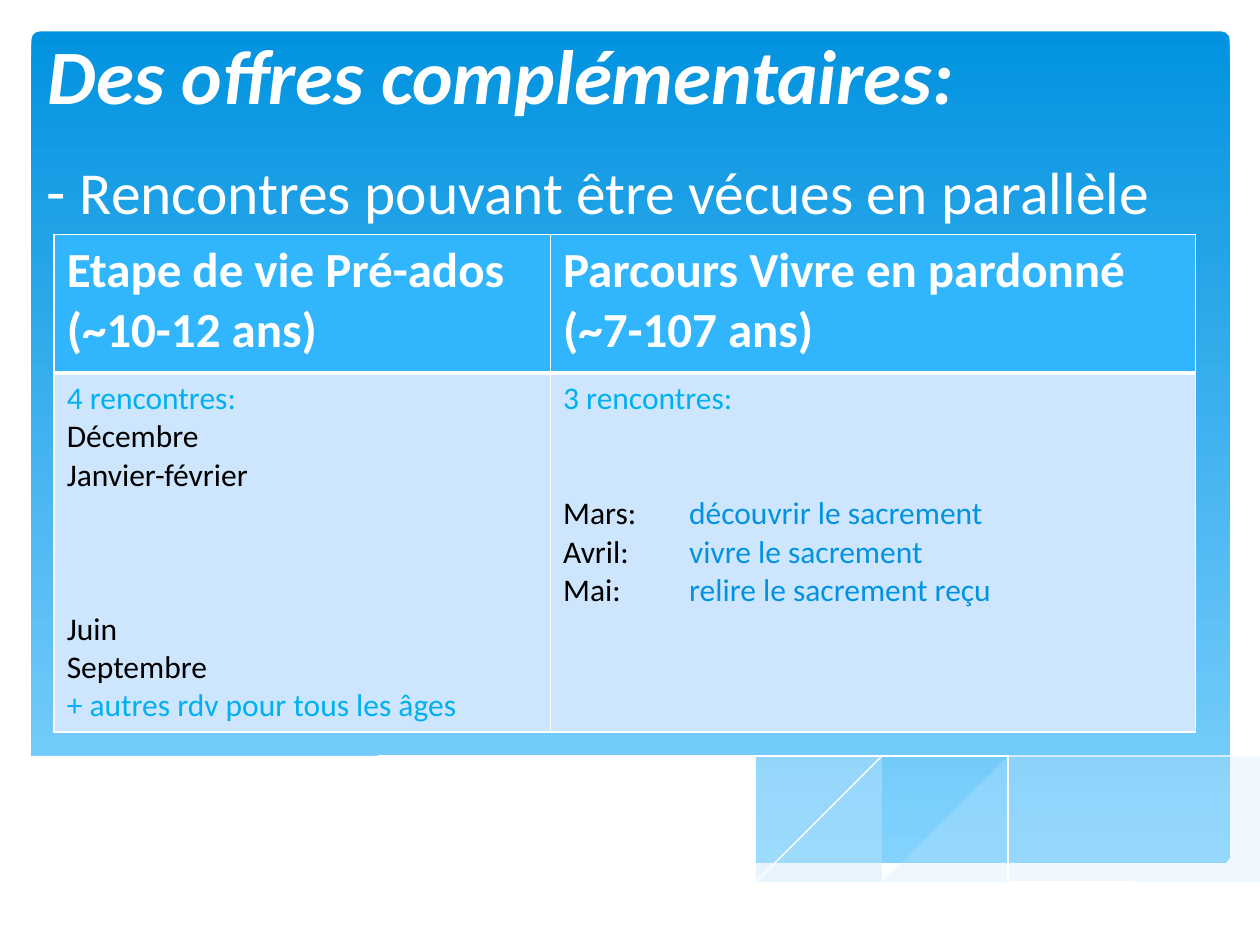
from lxml.etree import SubElement
from pptx import Presentation
from pptx.dml.color import RGBColor
from pptx.enum.shapes import MSO_SHAPE as SHAPE
from pptx.enum.text import MSO_ANCHOR as ANCHOR, PP_ALIGN as ALIGN
from pptx.oxml.ns import qn
from pptx.util import Inches, Pt

WHITE = RGBColor(0xFF, 0xFF, 0xFF)
BLACK = RGBColor(0, 0, 0)
BLUE = RGBColor(0x02, 0x93, 0xE0)
SKY = RGBColor(0x83, 0xD3, 0xFE)
MIST = RGBColor(0xC6, 0xE7, 0xFC)
CYAN = RGBColor(0x00, 0xB0, 0xF0)
HEAD = RGBColor(0x31, 0xB6, 0xFD)
BODY = RGBColor(0xCE, 0xE5, 0xFE)
FONT = "Calibri"
LINE_PITCH = 22

TITLE = "Des offres complémentaires:"
SUBTITLE = [("- ", 36), ("Rencontres pouvant être vécues en parallèle", 34)]
HEADERS = ["Etape de vie Pré-ados \v(~10-12 ans)",
           "Parcours Vivre en pardonné\n(~7-107 ans)"]
MEETINGS = [
    [(0, [("4 rencontres:", CYAN)]),
     (0, [("Décembre", BLACK)]),
     (0, [("Janvier-février", BLACK)]),
     (3, [("Juin", BLACK)]),
     (0, [("Septembre", BLACK)]),
     (0, [("+ autres rdv pour tous les âges", CYAN)])],
    [(0, [("3 rencontres:", CYAN)]),
     (2, [("Mars: \t", BLACK), ("découvrir le sacrement", BLUE)]),
     (0, [("Avril: \t", BLACK), ("vivre le sacrement", BLUE)]),
     (0, [("Mai: \t", BLACK), ("relire le sacrement reçu", BLUE)])],
]
COL_WIDTHS = [3.94, 5.12]
ROW_HEIGHTS = [1.1, 2.85]

RIGHT_WAVE = [
    [(9.77, 6.01), (9.22, 6.11), (8.62, 6.25), (7.8, 6.44), (7.07, 6.59), (6.62, 6.67)],
    [(6.62, 6.67), (7.33, 6.76), (8.04, 6.8), (8.73, 6.76), (9.29, 6.65), (9.77, 6.49)],
]
MIDDLE_WAVE = [
    [(8.94, 6.75), (8.08, 6.62), (7.07, 6.42), (6.3, 6.24), (5.55, 6.07), (4.89, 5.96),
     (4.2, 5.89), (3.62, 5.87), (2.87, 5.93)],
    [(2.87, 5.93), (3.63, 6.04), (4.5, 6.24), (5.3, 6.42), (6.19, 6.6), (6.96, 6.72),
     (7.62, 6.79), (8.29, 6.8), (8.94, 6.75)],
]
FALLING_LINE = [[(3.1, 5.97), (3.53, 5.91), (4.17, 5.89), (4.89, 5.92), (5.82, 6.02),
                 (6.96, 6.21), (7.96, 6.43), (9.08, 6.73)]]
RISING_LINE = [[(6.14, 6.59), (6.96, 6.37), (7.77, 6.18), (8.67, 6), (9.25, 5.92), (9.76, 5.87)]]
WHITE_WAVE = [
    [(9.77, 6.48), (9.3, 6.64), (8.75, 6.75), (8.09, 6.79), (7.26, 6.74), (6.26, 6.6),
     (5.29, 6.41), (4.47, 6.22), (3.65, 6.04), (2.92, 5.92), (2.3, 5.87), (1.77, 5.86),
     (1.19, 5.89), (0.76, 5.97), (0.23, 6.15)],
    [(0.23, 7.31), (9.77, 7.31)],
]
WAVES = [(RIGHT_WAVE, MIST, 29), (MIDDLE_WAVE, MIST, 40), (FALLING_LINE, None, 100),
         (RISING_LINE, None, 100), (WHITE_WAVE, WHITE, 100)]


def smooth(points, steps=5):
    ends = [points[0]] + points + [points[-1]]
    curve = [points[0]]
    for a, b, c, d in zip(ends, ends[1:], ends[2:], ends[3:]):
        for t in (i / steps for i in range(1, steps + 1)):
            curve.append(tuple(
                q + t * (r - p) / 2 + t * t * (2 * p - 5 * q + 4 * r - s) / 2
                + t ** 3 * (3 * q - p - 3 * r + s) / 2
                for p, q, r, s in zip(a, b, c, d)))
    return curve


def add_wave(shapes, curves, color, opacity):
    points = [pt for curve in curves for pt in smooth(curve)]
    fb = shapes.build_freeform(*points[0], scale=Inches(1))
    fb.add_line_segments(points[1:], close=color is not None)
    sp = fb.convert_to_shape()
    sp.shadow.inherit = False
    if color is None:
        sp.fill.background()
        sp.line.color.rgb = WHITE
        sp.line.width = Pt(0)
        return
    sp.line.fill.background()
    sp.fill.solid()
    sp.fill.fore_color.rgb = color
    if opacity < 100:
        clr = sp._element.spPr.find(qn("a:solidFill"))[0]
        SubElement(clr, qn("a:alpha"), val=str(opacity * 1000))


def style(font, size, color=None, bold=False):
    font.name, font.size, font.bold = FONT, Pt(size), bold
    if color is not None:
        font.color.rgb = color


def paint_cell(cell, color, top, bottom):
    tcPr = cell._tc.get_or_add_tcPr()
    for side, width in (("L", 1), ("R", 1), ("T", top), ("B", bottom)):
        ln = SubElement(tcPr, qn(f"a:ln{side}"), w=str(Pt(width)))
        SubElement(SubElement(ln, qn("a:solidFill")), qn("a:srgbClr"), val=str(WHITE))
    cell.fill.solid()
    cell.fill.fore_color.rgb = color


def add_backdrop(shapes):
    sp = shapes.add_shape(SHAPE.ROUNDED_RECTANGLE, Inches(0.25), Inches(0.25),
                          Inches(9.51), Inches(6.6))
    sp.adjustments[0] = 0.01
    sp.shadow.inherit = False
    sp.line.fill.background()
    sp.fill.gradient()
    sp.fill.gradient_angle = 270
    for stop, pos, color in zip(sp.fill.gradient_stops, (0, 1), (BLUE, SKY)):
        stop.position, stop.color.rgb = pos, color
    for wave in WAVES:
        add_wave(shapes, *wave)


def add_titles(shapes):
    sp = shapes.title
    shapes._spTree.append(sp._element)
    sp.left, sp.top, sp.width, sp.height = map(Inches, (0.28, 0.13, 8.74, 0.87))
    tf = sp.text_frame
    tf.text, tf.vertical_anchor = TITLE, ANCHOR.BOTTOM
    p = tf.paragraphs[0]
    p.alignment = ALIGN.LEFT
    style(p.font, 44, WHITE, True)
    p.font.italic = True

    tf = shapes.add_textbox(*map(Inches, (0.27, 1.15, 9.72, 5))).text_frame
    tf.word_wrap = True
    for text, size in SUBTITLE:
        r = tf.paragraphs[0].add_run()
        r.text = text
        style(r.font, size, WHITE)


def add_meetings(shapes):
    table = shapes.add_table(2, 2, Inches(0.43), Inches(1.86), Inches(sum(COL_WIDTHS)),
                             Inches(sum(ROW_HEIGHTS))).table
    for row, height in zip(table.rows, ROW_HEIGHTS):
        row.height = Inches(height)
    for c, (width, header, lines) in enumerate(zip(COL_WIDTHS, HEADERS, MEETINGS)):
        table.columns[c].width = Inches(width)
        head, body = table.cell(0, c), table.cell(1, c)
        paint_cell(head, HEAD, 1, 3)
        paint_cell(body, BODY, 3, 1)
        head.text = header
        for p in head.text_frame.paragraphs:
            style(p.font, 28, WHITE, True)
        tf = body.text_frame
        for i, (gap, runs) in enumerate(lines):
            p = tf.add_paragraph() if i else tf.paragraphs[0]
            p.space_before = Pt(gap * LINE_PITCH)
            style(p.font, 18)
            for text, color in runs:
                r = p.add_run()
                r.text, r.font.color.rgb = text, color


def main():
    prs = Presentation()
    prs.slide_width, prs.slide_height = Inches(10), Inches(7.5)
    shapes = prs.slides.add_slide(prs.slide_layouts[5]).shapes
    add_backdrop(shapes)
    add_titles(shapes)
    add_meetings(shapes)
    prs.save("out.pptx")


if __name__ == "__main__":
    main()
